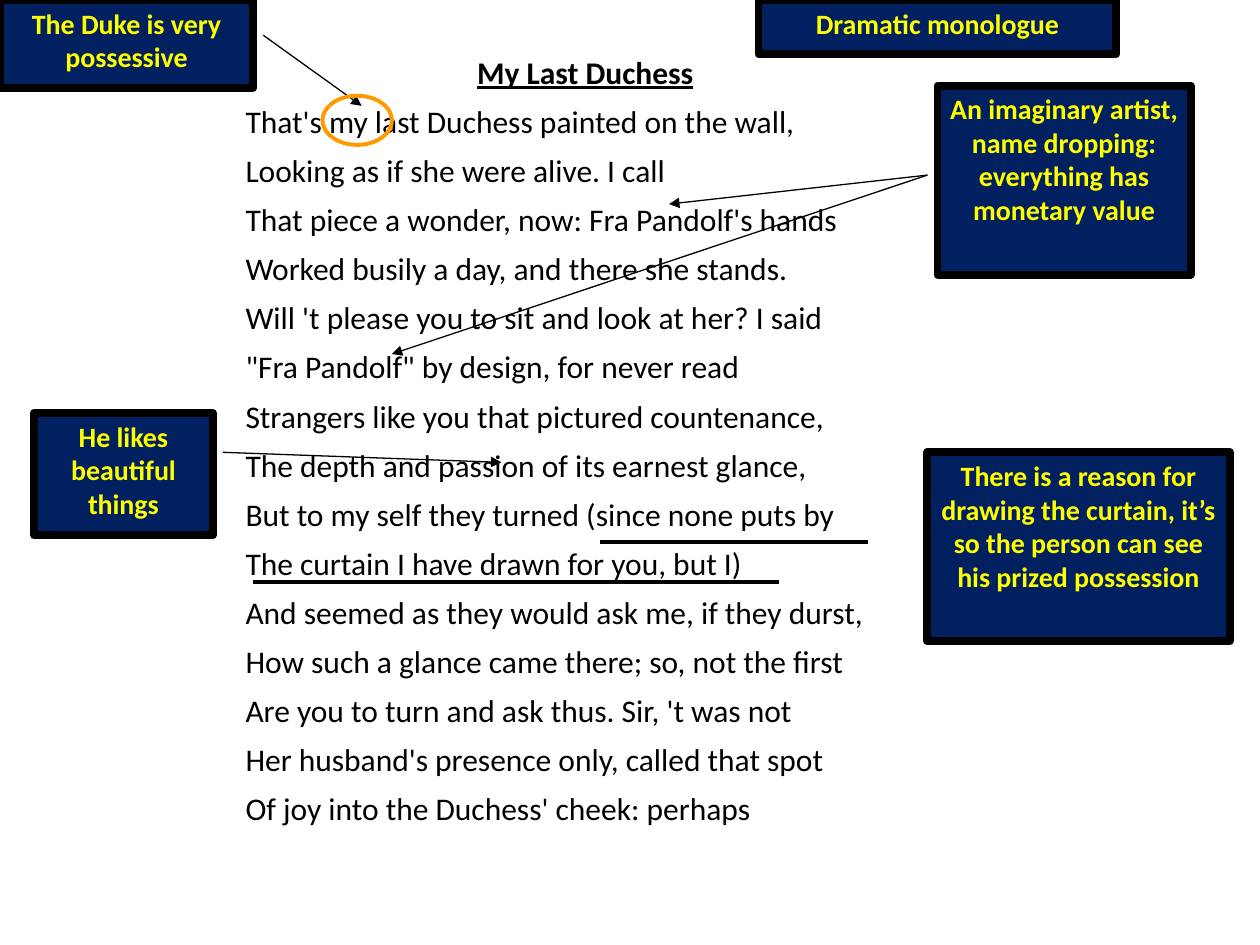
import pptx
import pptx.dml.color
import pptx.enum.shapes
import pptx.enum.text
import pptx.oxml.ns
import pptx.util
from lxml import etree

Inches, Pt = pptx.util.Inches, pptx.util.Pt
SHAPE = pptx.enum.shapes.MSO_SHAPE
ALIGN = pptx.enum.text.PP_ALIGN
qn = pptx.oxml.ns.qn

FONT = "Calibri"
COLORS = {"ink": "000000", "paper": "FFFFFF", "navy": "002060",
          "yellow": "FFFF00", "orange": "FF9900"}

TITLE = "My Last Duchess"
POEM_AT = (1.85, 0.28, 5.59, 6.35)
POEM = [
    "That's my last Duchess painted on the wall,",
    "Looking as if she were alive. I call",
    "That piece a wonder, now: Fra Pandolf's hands",
    "Worked busily a day, and there she stands.",
    "Will 't please you to sit and look at her? I said",
    "\"Fra Pandolf\" by design, for never read",
    "Strangers like you that pictured countenance,",
    "The depth and passion of its earnest glance,",
    "But to my self they turned (since none puts by",
    "The curtain I have drawn for you, but I)",
    "And seemed as they would ask me, if they durst,",
    "How such a glance came there; so, not the first",
    "Are you to turn and ask thus. Sir, 't was not",
    "Her husband's presence only, called that spot",
    "Of joy into the Duchess' cheek: perhaps",
]

# Each note may have arrows and underlines (x1, y1, x2, y2) and a ring.
NOTES = [
    {"text": "Dramatic monologue", "at": (6.02, 0, 2.84, 0.43)},
    {"text": "The Duke is very possessive", "at": (0, 0, 2.01, 0.7),
     "arrows": [(2.09, 0.28, 2.87, 0.84)],
     "ring": (2.56, 0.76, 0.55, 0.39)},
    {"text": "There is a reason for drawing the curtain, it’s so the person "
             "can see his prized possession",
     "at": (7.36, 3.59, 2.4, 1.5),
     "rules": [(4.76, 4.3, 6.89, 4.3), (2.01, 4.62, 6.18, 4.62)]},
    {"text": "An imaginary artist, name dropping: everything has monetary value",
     "at": (7.44, 0.68, 2.01, 1.5),
     "arrows": [(7.36, 1.39, 5.31, 1.62), (7.36, 1.39, 3.11, 2.81)]},
    {"text": "He likes beautiful things", "at": (0.27, 3.28, 1.42, 0.97),
     "arrows": [(1.77, 3.59, 3.98, 3.67)]},
]


def color(name):
    return pptx.dml.color.RGBColor.from_string(COLORS[name])


def add_box(shapes, kind, at, fill=None, line=None, width=0):
    box = shapes.add_shape(kind, *map(Inches, at))
    box.shadow.inherit = False
    if fill:
        box.fill.solid()
        box.fill.fore_color.rgb = color(fill)
    else:
        box.fill.background()
    if line:
        box.line.color.rgb = color(line)
        box.line.width = Pt(width)
    else:
        box.line.fill.background()
    frame = box.text_frame
    frame.word_wrap = True
    frame.vertical_anchor = pptx.enum.text.MSO_ANCHOR.TOP
    return box


def add_run(para, text, size, tint, bold=False, under=False):
    run = para.add_run()
    run.text = text
    font = run.font
    font.name, font.size = FONT, Pt(size)
    font.bold, font.underline = bold, under
    font.color.rgb = color(tint)


def add_line(shapes, ends, width, arrow=False):
    kind = pptx.enum.shapes.MSO_CONNECTOR.STRAIGHT
    line = shapes.add_connector(kind, *map(Inches, ends))
    line.line.color.rgb = color("ink")
    line.line.width = Pt(width)
    if arrow:
        etree.SubElement(line.line._get_or_add_ln(), qn("a:tailEnd"),
                         type="triangle")
    etree.SubElement(line._element.spPr, qn("a:effectLst"))


def add_poem(shapes):
    box = add_box(shapes, SHAPE.RECTANGLE, POEM_AT, "paper")
    tint = box._element.spPr.find(".//" + qn("a:srgbClr"))
    etree.SubElement(tint, qn("a:alpha"), val="70000")
    head = box.text_frame.paragraphs[0]
    body = box.text_frame.add_paragraph()
    head.alignment, body.alignment = ALIGN.CENTER, ALIGN.LEFT
    head.line_spacing = body.line_spacing = 1.3
    add_run(head, TITLE, 18, "ink", bold=True, under=True)
    for i, verse in enumerate(POEM):
        if i:
            body.add_line_break()
        add_run(body, verse, 18, "ink")


def add_note(shapes, note):
    """Add a note box, grouped with its marks if it has any."""
    if len(note) > 2:
        shapes = shapes.add_group_shape().shapes
    box = add_box(shapes, SHAPE.RECTANGLE, note["at"], "navy", "ink", 4.5)
    para = box.text_frame.paragraphs[0]
    para.alignment = ALIGN.CENTER
    add_run(para, note["text"], 16, "yellow", bold=True)
    for ends in note.get("arrows", []):
        add_line(shapes, ends, 0.75, arrow=True)
    for ends in note.get("rules", []):
        add_line(shapes, ends, 2.25)
    if "ring" in note:
        add_box(shapes, SHAPE.OVAL, note["ring"], line="orange", width=2.25)


def main():
    deck = pptx.Presentation()
    deck.slide_width, deck.slide_height = Inches(10), Inches(7.5)
    slide = deck.slides.add_slide(deck.slide_layouts[6])
    add_poem(slide.shapes)
    for note in NOTES:
        add_note(slide.shapes, note)
    deck.save("out.pptx")


if __name__ == "__main__":
    main()
